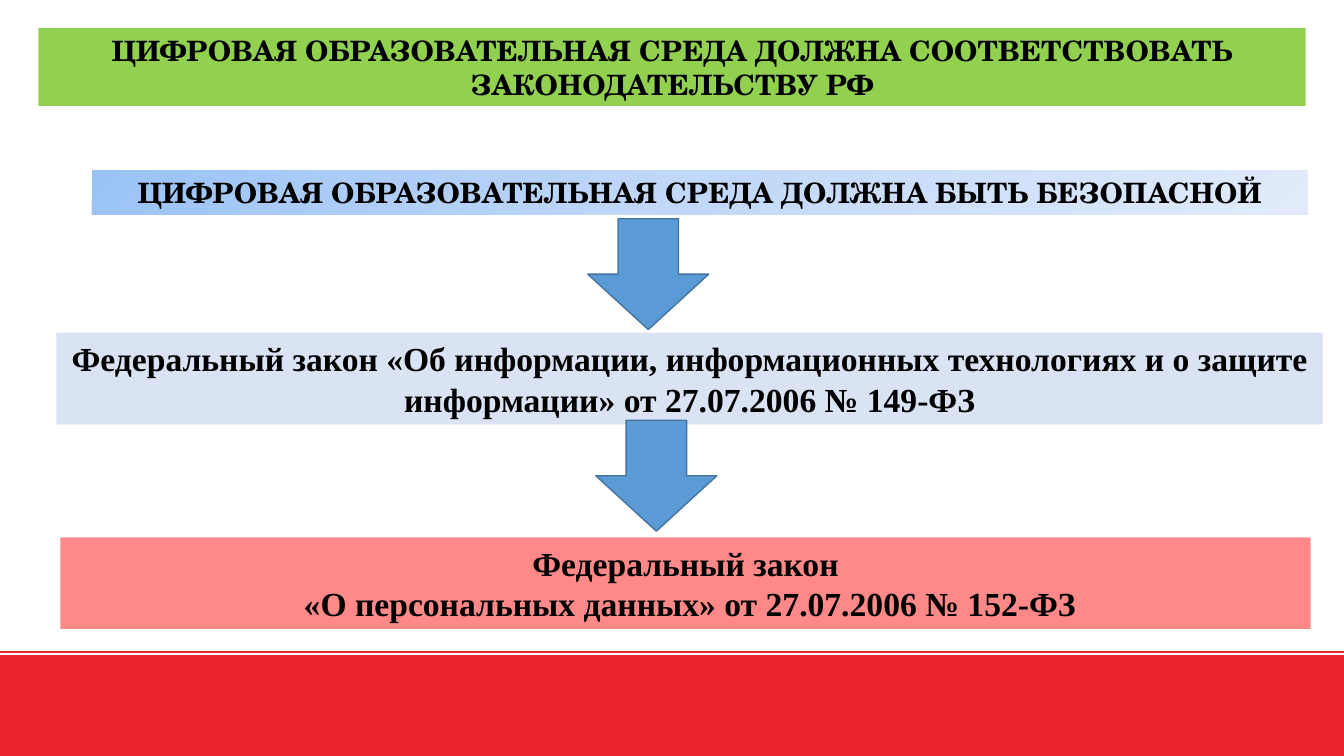
from copy import deepcopy

from lxml import etree
from pptx import Presentation
from pptx.dml.color import RGBColor
from pptx.enum.shapes import MSO_CONNECTOR, MSO_SHAPE
from pptx.enum.text import MSO_ANCHOR, MSO_AUTO_SIZE, PP_ALIGN
from pptx.oxml.ns import qn
from pptx.util import Inches, Pt

RECTANGLE = MSO_SHAPE.RECTANGLE
DOWN_ARROW = MSO_SHAPE.DOWN_ARROW
STRAIGHT = MSO_CONNECTOR.STRAIGHT
CENTER = PP_ALIGN.CENTER
MIDDLE = MSO_ANCHOR.MIDDLE
NO_AUTOFIT = MSO_AUTO_SIZE.NONE

WIDTH, HEIGHT = 13.33, 7.5
LAW_HEIGHT = 0.91


def color(hex_value):
    return RGBColor.from_string(hex_value)


class SlideBuilder:
    heading_style = ("TeX Gyre Schola", 20)
    law_style = ("Times New Roman", 24)
    text_color = "000000"
    red = "EA252C"
    arrow_fill, arrow_outline = "5B9BD5", "43739E"
    arrow_size = (1.2, 1.1)

    def __init__(self, slide):
        self.slide = slide

    def set_text(self, shape, text, style):
        font_name, size = style
        frame = shape.text_frame
        frame.text = text
        frame.word_wrap = True
        frame.auto_size = NO_AUTOFIT
        frame.vertical_anchor = MIDDLE
        for paragraph in frame.paragraphs:
            paragraph.alignment = CENTER
            paragraph.line_spacing = 1.0
            paragraph.space_before = Pt(0)
            for run in paragraph.runs:
                run.font.name = font_name
                run.font.size = Pt(size)
                run.font.bold = True
                run.font.color.rgb = color(self.text_color)

    def paint(self, shape, fill):
        shape.fill.solid()
        shape.fill.fore_color.rgb = color(fill)

    def paint_gradient(self, shape, stops):
        shape.fill.gradient()
        shape.fill.gradient_angle = 315
        stop_list = shape._element.spPr.find(".//" + qn("a:gsLst"))
        for _ in stops[2:]:
            stop_list.insert(1, deepcopy(stop_list[0]))
        for stop, (position, hex_value) in zip(shape.fill.gradient_stops, stops):
            stop.position = position
            stop.color.rgb = color(hex_value)

    def title(self, text, left, top, width, height, fill):
        title = self.slide.shapes.title
        title.left, title.top = Inches(left), Inches(top)
        title.width, title.height = Inches(width), Inches(height)
        self.paint(title, fill)
        self.set_text(title, text, self.heading_style)

    def shape(self, kind, left, top, width, height, outline=None):
        shape = self.slide.shapes.add_shape(
            kind, Inches(left), Inches(top), Inches(width), Inches(height))
        shape.shadow.inherit = False
        if outline:
            shape.line.color.rgb = color(outline)
            shape.line.width = Pt(1)
        else:
            shape.line.fill.background()
        return shape

    def law(self, text, left, top, width, fill):
        law = self.shape(RECTANGLE, left, top, width, LAW_HEIGHT)
        self.paint(law, fill)
        self.set_text(law, text, self.law_style)

    def requirement(self, text, left, top, width, height, stops):
        requirement = self.shape(RECTANGLE, left, top, width, height)
        self.paint_gradient(requirement, stops)
        self.set_text(requirement, text, self.heading_style)

    def arrow(self, left, top):
        arrow = self.shape(DOWN_ARROW, left, top, *self.arrow_size, self.arrow_outline)
        self.paint(arrow, self.arrow_fill)

    def footer(self, line_top, band_top):
        rule = self.slide.shapes.add_connector(
            STRAIGHT, 0, Inches(line_top), Inches(WIDTH), Inches(line_top))
        rule.line.color.rgb = color(self.red)
        rule.line.width = Pt(1.5)
        etree.SubElement(rule._element.spPr, qn("a:effectLst"))
        band = self.shape(RECTANGLE, 0, band_top, WIDTH, HEIGHT - band_top, self.red)
        self.paint(band, self.red)


def main():
    presentation = Presentation()
    presentation.slide_width = Inches(WIDTH)
    presentation.slide_height = Inches(HEIGHT)
    title_only = presentation.slide_layouts[5]
    builder = SlideBuilder(presentation.slides.add_slide(title_only))

    # Footer band
    builder.footer(6.47, 6.51)

    # Title
    builder.title(
        "ЦИФРОВАЯ ОБРАЗОВАТЕЛЬНАЯ СРЕДА ДОЛЖНА СООТВЕТСТВОВАТЬ ЗАКОНОДАТЕЛЬСТВУ РФ",
        0.38, 0.28, 12.57, 0.77, "92D050")

    # Safety requirement and the laws behind it
    builder.requirement(
        "ЦИФРОВАЯ ОБРАЗОВАТЕЛЬНАЯ СРЕДА ДОЛЖНА БЫТЬ БЕЗОПАСНОЙ",
        0.91, 1.69, 12.06, 0.44,
        [(0, "9AC3F5"), (0.5, "C2D8F8"), (1, "E1EBFB")])
    builder.law(
        "Федеральный закон «Об информации, информационных технологиях и о защите "
        "информации» от 27.07.2006 № 149-ФЗ",
        0.56, 3.3, 12.56, "DAE3F3")
    builder.law(
        "Федеральный закон\n «О персональных данных» от 27.07.2006 № 152-ФЗ",
        0.6, 5.33, 12.4, "FF8989")

    # Arrows between the steps
    for left, top in ((5.83, 2.17), (5.91, 4.17)):
        builder.arrow(left, top)

    presentation.save("out.pptx")


if __name__ == "__main__":
    main()
